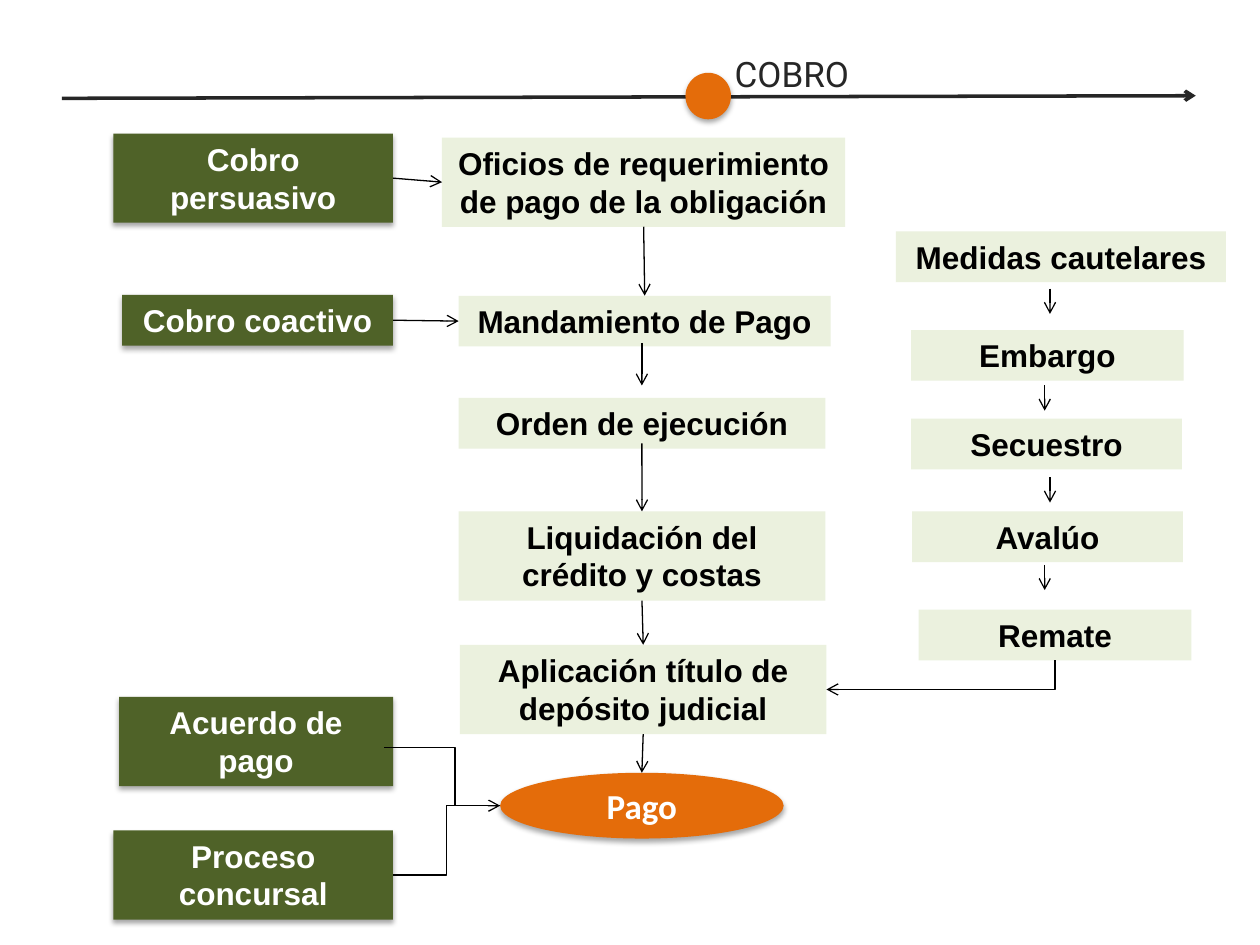
from lxml.etree import SubElement
from pptx import Presentation
from pptx.dml.color import RGBColor
from pptx.enum.shapes import MSO_CONNECTOR as CONNECTOR, MSO_SHAPE as SHAPE
from pptx.enum.text import MSO_ANCHOR as ANCHOR, MSO_AUTO_SIZE as AUTO_SIZE, PP_ALIGN as ALIGN
from pptx.oxml.ns import qn
from pptx.util import Pt

COLORS = {"dark": "262626", "orange": "E46C0A", "green": "4F6228",
          "pale": "EBF1DE", "black": "000000", "white": "FFFFFF"}
ONE_LINE, TWO_LINES = 29, 51
STAGE_RIGHT = 224.6
TOP, LEFT, BOTTOM, RIGHT = range(4)

# Key: text, width, top, height
STAGES = {
    "persuasivo": ("Cobro persuasivo", 159.8, 76.3, TWO_LINES),
    "coactivo": ("Cobro coactivo", 154.8, 168.5, ONE_LINE),
    "acuerdo": ("Acuerdo de pago", 156.6, 398.2, TWO_LINES),
    "concursal": ("Proceso concursal", 159.8, 474.5, TWO_LINES),
}
# Key: text, left, top, width, height
STEPS = {
    "oficios": ("Oficios de requerimiento de pago de la obligación", 252.6, 78.6, 230.4, TWO_LINES),
    "mandamiento": ("Mandamiento de Pago", 262.1, 169, 212.6, ONE_LINE),
    "orden": ("Orden de ejecución", 262.1, 227.4, 209.5, ONE_LINE),
    "liquidacion": ("Liquidación del crédito y costas", 262.1, 292.2, 209.5, TWO_LINES),
    "aplicacion": ("Aplicación título de depósito judicial", 262.8, 368.5, 209.5, TWO_LINES),
    "medidas": ("Medidas cautelares", 512, 132.2, 188.6, ONE_LINE),
    "embargo": ("Embargo", 520.6, 188.6, 155.8, ONE_LINE),
    "secuestro": ("Secuestro", 520.6, 239.2, 154.8, ONE_LINE),
    "avaluo": ("Avalúo", 521.2, 292.2, 154.8, ONE_LINE),
    "remate": ("Remate", 525, 348.4, 155.8, ONE_LINE),
}
JOINED_ARROWS = [
    ("persuasivo", RIGHT, "oficios", LEFT),
    ("coactivo", RIGHT, "mandamiento", LEFT),
    ("oficios", BOTTOM, "mandamiento", TOP),
    ("liquidacion", BOTTOM, "aplicacion", TOP),
    ("aplicacion", BOTTOM, "pago", TOP),
]
MEASURE_ARROWS = [(600, 165), (597, 220.3), (600, 272.8), (597, 322.8)]
MEASURE_ARROW_LENGTH = 14.4


def rgb(name):
    return RGBColor.from_string(COLORS[name])


def format_text(text_frame, text, font_name, size, color, align, bold):
    text_frame.text = text
    paragraph = text_frame.paragraphs[0]
    paragraph.alignment = align
    font = paragraph.runs[0].font
    font.name, font.size, font.bold = font_name, Pt(size), bold
    font.color.rgb = rgb(color)


def add_shadow(shape):
    effects = shape._element.spPr.find(qn("a:effectLst"))
    shadow = SubElement(effects, qn("a:outerShdw"), blurRad=str(Pt(3.1)),
                        dist=str(Pt(1.8)), dir="5400000", rotWithShape="0")
    color = SubElement(shadow, qn("a:srgbClr"), val=COLORS["black"])
    SubElement(color, qn("a:alpha"), val="35000")


def add_filled(slide, kind, left, top, width, height, fill, shadow=False):
    shape = slide.shapes.add_shape(kind, Pt(left), Pt(top), Pt(width), Pt(height))
    shape.shadow.inherit = False
    shape.fill.solid()
    shape.fill.fore_color.rgb = rgb(fill)
    shape.line.fill.background()
    if shadow:
        add_shadow(shape)
    return shape


def add_box(slide, text, left, top, width, height, fill, color, shadow=False):
    box = add_filled(slide, SHAPE.RECTANGLE, left, top, width, height, fill, shadow)
    frame = box.text_frame
    frame.word_wrap = True
    frame.auto_size = AUTO_SIZE.SHAPE_TO_FIT_TEXT
    frame.vertical_anchor = ANCHOR.TOP
    format_text(frame, text, "Arial", 18, color, ALIGN.CENTER, True)
    return box


def add_line(slide, start, end, kind=CONNECTOR.STRAIGHT, color="black", width=0.75, arrow=True):
    points = [Pt(value) for value in (*start, *end)]
    line = slide.shapes.add_connector(kind, *points)
    line.line.color.rgb = rgb(color)
    line.line.width = Pt(width)
    if arrow:
        SubElement(line.line._get_or_add_ln(), qn("a:tailEnd"), type="arrow")
    SubElement(line._element.spPr, qn("a:effectLst"))
    return line


def add_elbow(slide, start, end, bend=0.5, arrow=True):
    elbow = add_line(slide, start, end, CONNECTOR.ELBOW, arrow=arrow)
    guides = elbow._element.spPr.prstGeom.get_or_add_avLst()
    SubElement(guides, qn("a:gd"), name="adj1", fmla=f"val {round(bend * 100000)}")


def add_corner(slide, start, end):
    """Arrow that runs down from start, then left to end: a quarter-turned elbow."""
    across, down = start[0] - end[0], end[1] - start[1]
    center_x, center_y = (start[0] + end[0]) / 2, (start[1] + end[1]) / 2
    corner = add_line(slide, (center_x - down / 2, center_y - across / 2),
                      (center_x + down / 2, center_y + across / 2), CONNECTOR.ELBOW)
    properties = corner._element.spPr
    properties.prstGeom.set("prst", "bentConnector2")
    properties.find(qn("a:xfrm")).set("rot", "5400000")


def add_title(slide, text):
    title = slide.shapes.title
    title.left, title.top, title.width, title.height = Pt(412.6), Pt(26.6), Pt(242), Pt(31)
    title.text_frame.vertical_anchor = ANCHOR.TOP
    format_text(title.text_frame, text, "Roboto", 20, "dark", ALIGN.LEFT, False)


def main():
    presentation = Presentation()
    presentation.slide_width, presentation.slide_height = Pt(720), Pt(540)
    slide = presentation.slides.add_slide(presentation.slide_layouts[5])

    # Timeline with its marker and title
    add_line(slide, (35.3, 56.2), (683.3, 54.7), color="dark", width=2)
    add_title(slide, "COBRO")
    add_filled(slide, SHAPE.OVAL, 391.7, 41.6, 26, 26.6, "orange", shadow=True)

    # Stages share a right edge; steps form the two right-hand columns
    boxes = {}
    for key, (text, width, top, height) in STAGES.items():
        boxes[key] = add_box(slide, text, STAGE_RIGHT - width, top, width, height,
                             "green", "white", shadow=True)
    for key, (text, *place) in STEPS.items():
        boxes[key] = add_box(slide, text, *place, "pale", "black")

    # Final payment
    boxes["pago"] = add_filled(slide, SHAPE.OVAL, 285.8, 441.6, 162, 37.6, "orange", shadow=True)
    boxes["pago"].text_frame.vertical_anchor = ANCHOR.MIDDLE
    format_text(boxes["pago"].text_frame, "Pago", "Calibri", 20, "white", ALIGN.CENTER, True)

    # Straight arrows
    for source, source_side, target, target_side in JOINED_ARROWS:
        arrow = add_line(slide, (0, 0), (0, 0))
        arrow.begin_connect(boxes[source], source_side)
        arrow.end_connect(boxes[target], target_side)
    add_line(slide, (366.8, 196), (366.8, 220.3))
    arrow = add_line(slide, (366.8, 253.4), (366.8, 292.2))
    arrow.end_connect(boxes["liquidacion"], TOP)
    for x, y in MEASURE_ARROWS:
        add_line(slide, (x, y), (x, y + MEASURE_ARROW_LENGTH))

    # Bent arrows into the title deposit and the payment
    add_corner(slide, (602.8, 377.4), (472.3, 394))
    payment_entry = (285.8, 460.4)
    add_elbow(slide, (219.6, 427), payment_entry, bend=0.61)
    add_elbow(slide, (STAGE_RIGHT, 500), payment_entry, arrow=False)

    presentation.save("out.pptx")


if __name__ == "__main__":
    main()
